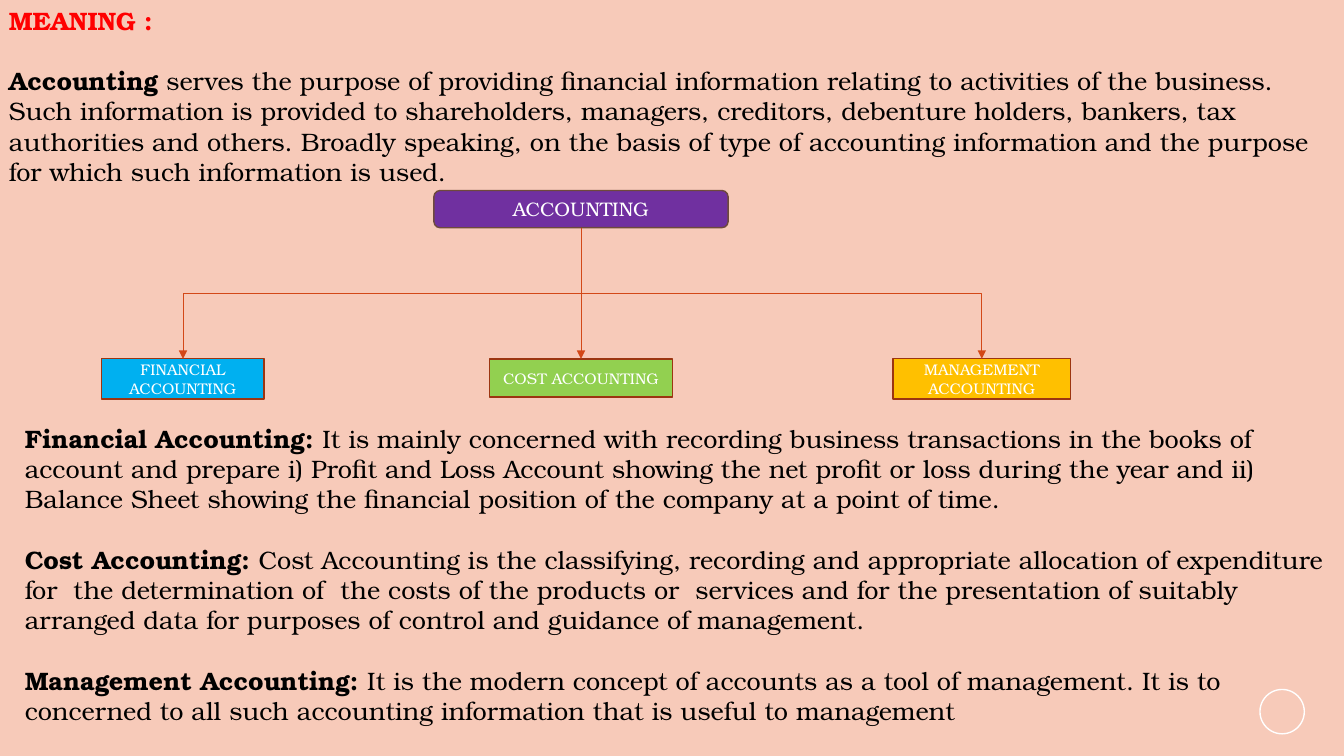
import pptx
import pptx.util
import pptx.dml.color
import pptx.enum.shapes
import pptx.enum.text
import pptx.oxml
import pptx.oxml.ns

Pt = pptx.util.Pt
Shape = pptx.enum.shapes.MSO_SHAPE
Link = pptx.enum.shapes.MSO_CONNECTOR
FACE = "TeX Gyre Bonum"

MEANING = [
    ("MEANING :", "", "FF0000"),
    ("Accounting", " serves the purpose of providing financial information relating to activities "
     "of the business. Such information is provided to shareholders, managers, creditors, "
     "debenture holders, bankers, tax authorities and others. Broadly speaking, on the basis of "
     "type of accounting information and the purpose for which such information is used.", "000000"),
]
BRANCHES = [
    ("Financial Accounting: ", "It is mainly concerned with recording business transactions in the "
     "books of account and prepare i) Profit and Loss Account showing the net profit or loss during "
     "the year and ii) Balance Sheet showing the financial position of the company at a point of "
     "time.", "000000"),
    ("Cost Accounting: ", "Cost Accounting is the classifying, recording and appropriate allocation "
     "of expenditure for  the determination of  the costs of the products or  services and for the "
     "presentation of suitably arranged data for purposes of control and guidance of management.",
     "000000"),
    ("Management Accounting: ", "It is the modern concept of accounts as a tool of management. It is "
     "to concerned to all such accounting information that is useful to management", "000000"),
]
# Label, fill, left, width and height of each branch box
NODES = [
    ("FINANCIAL ACCOUNTING", "00B0F0", 72.7, 116, 28.8),
    ("COST ACCOUNTING", "92D050", 349.5, 131, 27.4),
    ("MANAGEMENT ACCOUNTING", "FFC000", 638, 126.7, 28.8),
]


def color(code):
    return pptx.dml.color.RGBColor.from_string(code)


def style(font, size, code, bold=False):
    font.name = FACE
    font.size = Pt(size)
    font.bold = bold
    font.color.rgb = color(code)


def prose(slide, left, top, width, height, items):
    """Paragraphs with a bold lead, one line apart."""
    frame = slide.shapes.add_textbox(Pt(left), Pt(top), Pt(width), Pt(height)).text_frame
    frame.word_wrap = True
    for i, (lead, rest, code) in enumerate(items):
        para = frame.add_paragraph() if i else frame.paragraphs[0]
        if i:
            para.space_before = Pt(21.6)
        for text, bold in ((lead, True), (rest, False)):
            if text:
                run = para.add_run()
                run.text = text
                style(run.font, 18, code, bold)


def node(slide, kind, left, top, width, height, text, fill, edge, size):
    box = slide.shapes.add_shape(kind, Pt(left), Pt(top), Pt(width), Pt(height))
    box.shadow.inherit = False
    box.fill.solid()
    box.fill.fore_color.rgb = color(fill)
    box.line.color.rgb = color(edge)
    box.line.width = Pt(1)
    frame = box.text_frame
    frame.word_wrap = True
    frame.vertical_anchor = pptx.enum.text.MSO_ANCHOR.MIDDLE
    frame.text = text
    para = frame.paragraphs[0]
    para.alignment = pptx.enum.text.PP_ALIGN.CENTER
    style(para.runs[0].font, size, "FFFFFF")


def arrow(slide, x, y, endx, endy):
    """Arrow down; an elbow is a level connector turned a quarter about its centre."""
    if x == endx:
        link = slide.shapes.add_connector(Link.STRAIGHT, Pt(x), Pt(y), Pt(endx), Pt(endy))
    else:
        midx, midy = (x + endx) / 2, (y + endy) / 2
        side = 1 if endx > x else -1
        halfw, halfh = side * (endy - y) / 2, abs(endx - x) / 2
        link = slide.shapes.add_connector(Link.ELBOW, Pt(midx + halfw), Pt(midy - halfh),
                                          Pt(midx - halfw), Pt(midy + halfh))
        turn = 270 if side > 0 else 90
        link._element.spPr.find(pptx.oxml.ns.qn("a:xfrm")).set("rot", str(turn * 60000))
    link.line.color.rgb = color("D34817")
    link.line.width = Pt(0.5)
    space = pptx.oxml.ns.nsdecls("a")
    link.line._get_or_add_ln().append(
        pptx.oxml.parse_xml(f'<a:tailEnd {space} type="triangle"/>'))
    link._element.spPr.append(pptx.oxml.parse_xml(f"<a:effectLst {space}/>"))


def chart(slide, left, top, width, height):
    """Root box over three branches, placed within the given box."""
    rootw, rooth, low = 210.2, 26.6, 120.2
    mid = left + width / 2 - 65
    node(slide, Shape.ROUNDED_RECTANGLE, mid - rootw / 2, top, rootw, rooth,
         "ACCOUNTING", "7030A0", "6E493C", 14)
    for text, fill, x, wide, high in NODES:
        node(slide, Shape.RECTANGLE, left + x, top + low, wide, high, text, fill, "9C3511", 11)
        arrow(slide, mid, top + rooth, left + x + wide / 2, top + low)


def ring(slide, left, top, size):
    """Plain ring in the corner."""
    disc = slide.shapes.add_shape(Shape.OVAL, Pt(left), Pt(top), Pt(size), Pt(size))
    disc.shadow.inherit = False
    disc.fill.background()
    disc.line.color.rgb = color("FFFFFF")
    disc.line.width = Pt(1)


def main():
    deck = pptx.Presentation()
    deck.slide_width, deck.slide_height = Pt(960), Pt(540)
    slide = deck.slides.add_slide(deck.slide_layouts[6])
    slide.background.fill.solid()
    slide.background.fill.fore_color.rgb = color("F7CAB9")
    ring(slide, 900, 492.5, 31.7)
    prose(slide, -0.7, 0, 960, 181.4, MEANING)
    chart(slide, 0, 136.1, 960, 149)
    prose(slide, 10.6, 298.8, 949.4, 225.4, BRANCHES)
    deck.save("out.pptx")


if __name__ == "__main__":
    main()
